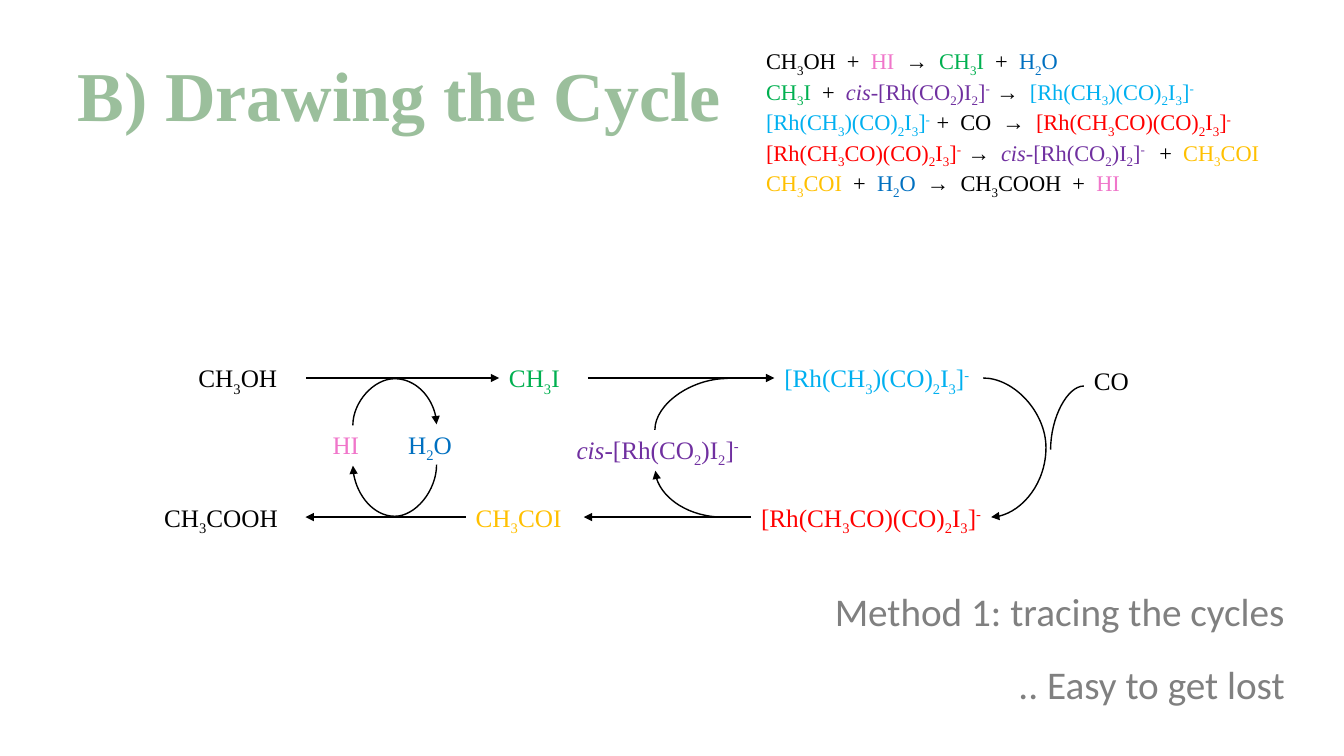
from dataclasses import dataclass
from itertools import groupby
from typing import Iterator, Optional

from pptx import Presentation
from pptx.dml.color import RGBColor
from pptx.enum import shapes, text
from pptx.oxml import ns
from pptx.oxml.xmlchemy import OxmlElement
from pptx.util import Inches, Pt


@dataclass(frozen=True)
class Theme:
    formula_font: str = "Times New Roman"
    note_font: str = "Calibri"
    ink: str = "000000"
    title_color: str = "9BBF9C"
    note_color: str = "808080"
    title_size: float = 50
    note_size: float = 28
    note_gap: float = 18
    species_size: float = 18
    equation_size: float = 16
    line_width: float = 1
    subscript: str = "-25000"
    superscript: str = "30000"


THEME = Theme()

METHANOL, ACETIC_ACID = "CH3OH", "CH3COOH"
METHYL_IODIDE, ACETYL_IODIDE = "CH3I", "CH3COI"
CATALYST = "cis-[Rh(CO2)I2]-"
METHYL_RHODIUM = "[Rh(CH3)(CO)2I3]-"
ACYL_RHODIUM = "[Rh(CH3CO)(CO)2I3]-"

SPECIES_COLORS = {
    "HI": "F076CA", "H2O": "0070C0",
    METHYL_IODIDE: "00B050", ACETYL_IODIDE: "FFC000",
    CATALYST: "7030A0", METHYL_RHODIUM: "00B0F0", ACYL_RHODIUM: "FF0000",
}

# Terms are parted by bars; spaces that follow a charge are raised with it.
EQUATIONS = [
    f"{METHANOL}  +  |HI|  →  |{METHYL_IODIDE}|  +  |H2O",
    f"{METHYL_IODIDE}|  +  |{CATALYST}  |→  |{METHYL_RHODIUM}",
    f"{METHYL_RHODIUM}  |+  CO  →  |{ACYL_RHODIUM}",
    f"{ACYL_RHODIUM}  |→  |{CATALYST} |  +  |{ACETYL_IODIDE}",
    f"{ACETYL_IODIDE}|  +  |H2O|  →  {ACETIC_ACID}  +  |HI",
]


@dataclass(frozen=True)
class Species:
    formula: str
    left: float
    top: float
    width: float


@dataclass(frozen=True)
class Arrow:
    """A straight arrow; start_x frees its tail from the source's side."""
    source: str
    source_side: int
    target: str
    target_side: int
    y: float
    start_x: Optional[float] = None


@dataclass(frozen=True)
class Curve:
    """A curved connector; one without a bend is a quarter turn."""
    left: float
    top: float
    width: float
    height: float
    rotation: int = 0
    flips: str = ""
    bend: Optional[float] = None
    arrowhead: bool = True


UPPER_ROW, LOWER_ROW = 3.55, 4.93
SPECIES = [
    Species(METHANOL, 1.87, UPPER_ROW, 1.17),
    Species(METHYL_IODIDE, 4.95, UPPER_ROW, 1.17),
    Species("HI", 3.2, 4.21, 0.58),
    Species("H2O", 3.95, 4.21, 0.75),
    Species(METHYL_RHODIUM, 7.68, UPPER_ROW, 2.15),
    Species("CO", 10.75, 3.58, 0.58),
    Species(ACYL_RHODIUM, 7.45, LOWER_ROW, 2.47),
    Species(CATALYST, 5.62, 4.26, 2.5),
    Species(ACETYL_IODIDE, 4.62, LOWER_ROW, 1.17),
    Species(ACETIC_ACID, 1.53, LOWER_ROW, 1.5),
]
SPECIES_HEIGHT = 0.4
LEFT_SIDE, RIGHT_SIDE = 1, 3
ARROWS = [
    Arrow(METHANOL, RIGHT_SIDE, METHYL_IODIDE, LEFT_SIDE, 3.75),
    Arrow(METHYL_IODIDE, RIGHT_SIDE, METHYL_RHODIUM, LEFT_SIDE, 3.75, 5.83),
    Arrow(ACYL_RHODIUM, LEFT_SIDE, ACETYL_IODIDE, RIGHT_SIDE, 5.13),
    Arrow(ACETYL_IODIDE, LEFT_SIDE, ACETIC_ACID, RIGHT_SIDE, 5.13),
]
CURVES = [
    Curve(3.91, 3.8, 0.01, 0.83, 90, "HV", 47),
    Curve(3.91, 4.2, 0.01, 0.83, 90, "", 52),
    Curve(9.75, 3.75, 0.08, 1.38, bend=7.81),
    Curve(6.5, 4.67, 0.67, 0.46, 180),
    Curve(6.6, 3.65, 0.51, 0.72, 90, "HV", arrowhead=False),
    Curve(10.42, 3.83, 0.33, 0.63, 180, "V", arrowhead=False),
]


def format_run(run, font: str, size: float, color: str) -> None:
    run.font.name = font
    run.font.size = Pt(size)
    run.font.color.rgb = RGBColor.from_string(color)


def split_term(term: str) -> Iterator[tuple[str, Optional[str], bool]]:
    """Yield (text, baseline, italic): digits sink, a charge after ] rises."""
    if term.startswith("cis"):
        yield "cis", None, True
        term = term[3:]
    body, bracket, gap = term.partition("]-")
    if bracket:
        body += "]"
    for is_digit, characters in groupby(body, str.isdigit):
        yield "".join(characters), THEME.subscript if is_digit else None, False
    if bracket:
        yield "-" + gap, THEME.superscript, False


def write_terms(paragraph, terms: str, size: float) -> None:
    for term in terms.split("|"):
        color = SPECIES_COLORS.get(term.strip(), THEME.ink)
        for content, baseline, italic in split_term(term):
            run = paragraph.add_run()
            run.text = content
            format_run(run, THEME.formula_font, size, color)
            if italic:
                run.font.italic = True
            if baseline:
                run.font._element.set("baseline", baseline)


def add_text_box(slide, left: float, top: float, width: float, height: float):
    shape = slide.shapes.add_textbox(Inches(left), Inches(top), Inches(width), Inches(height))
    shape.text_frame.word_wrap = True
    return shape


def add_title(slide) -> None:
    title = slide.shapes.title
    title.left, title.top, title.width, title.height = map(Inches, (0.67, 0.3, 12, 1.25))
    frame = title.text_frame
    frame.text = "B) Drawing the Cycle"
    frame.vertical_anchor = text.MSO_ANCHOR.MIDDLE
    paragraph = frame.paragraphs[0]
    paragraph.alignment = text.PP_ALIGN.LEFT
    format_run(paragraph.runs[0], THEME.formula_font, THEME.title_size, THEME.title_color)
    paragraph.runs[0].font.bold = True


def add_equations(slide) -> None:
    frame = add_text_box(slide, 7.5, 0.42, 5.33, 1.45).text_frame
    for index, equation in enumerate(EQUATIONS):
        paragraph = frame.add_paragraph() if index else frame.paragraphs[0]
        write_terms(paragraph, equation, THEME.equation_size)


def add_note(slide) -> None:
    frame = add_text_box(slide, 7.67, 5.78, 5.17, 1.3).text_frame
    frame.text = "Method 1: tracing the cycles\n.. Easy to get lost"
    for paragraph in frame.paragraphs:
        paragraph.alignment = text.PP_ALIGN.RIGHT
        format_run(paragraph.runs[0], THEME.note_font, THEME.note_size, THEME.note_color)
    frame.paragraphs[1].space_before = Pt(THEME.note_gap)


def add_species(slide, species: Species):
    shape = add_text_box(slide, species.left, species.top, species.width, SPECIES_HEIGHT)
    write_terms(shape.text_frame.paragraphs[0], species.formula, THEME.species_size)
    return shape


def style_line(connector, arrowhead: bool) -> None:
    connector.line.color.rgb = RGBColor.from_string(THEME.ink)
    connector.line.width = Pt(THEME.line_width)
    if arrowhead:
        tail = OxmlElement("a:tailEnd")
        tail.set("type", "triangle")
        connector.line._get_or_add_ln().append(tail)
    connector._element.spPr.append(OxmlElement("a:effectLst"))


def add_arrow(slide, arrow: Arrow, boxes: dict) -> None:
    start_x, y = Inches(arrow.start_x or 0), Inches(arrow.y)
    connector = slide.shapes.add_connector(shapes.MSO_CONNECTOR.STRAIGHT, start_x, y, start_x, y)
    if arrow.start_x is None:
        connector.begin_connect(boxes[arrow.source], arrow.source_side)
    connector.end_connect(boxes[arrow.target], arrow.target_side)
    style_line(connector, True)


def add_curve(slide, curve: Curve) -> None:
    connector = slide.shapes.add_connector(
        shapes.MSO_CONNECTOR.CURVE, Inches(curve.left), Inches(curve.top),
        Inches(curve.left + curve.width), Inches(curve.top + curve.height))
    properties = connector._element.spPr
    frame = properties.find(ns.qn("a:xfrm"))
    frame.set("rot", str(curve.rotation * 60000))
    for axis in curve.flips:
        frame.set("flip" + axis, "1")
    geometry = properties.find(ns.qn("a:prstGeom"))
    if curve.bend is None:
        geometry.set("prst", "curvedConnector2")
    else:
        guide = OxmlElement("a:gd")
        guide.set("name", "adj1")
        guide.set("fmla", f"val {round(curve.bend * 100000)}")
        geometry.find(ns.qn("a:avLst")).append(guide)
    style_line(connector, curve.arrowhead)


def main() -> None:
    presentation = Presentation()
    presentation.slide_width, presentation.slide_height = Inches(13.33), Inches(7.5)
    slide = presentation.slides.add_slide(presentation.slide_layouts.get_by_name("Title Only"))
    add_title(slide)
    add_equations(slide)
    boxes = {species.formula: add_species(slide, species) for species in SPECIES}
    for arrow in ARROWS:
        add_arrow(slide, arrow, boxes)
    for curve in CURVES:
        add_curve(slide, curve)
    add_note(slide)
    presentation.save("out.pptx")


if __name__ == "__main__":
    main()
